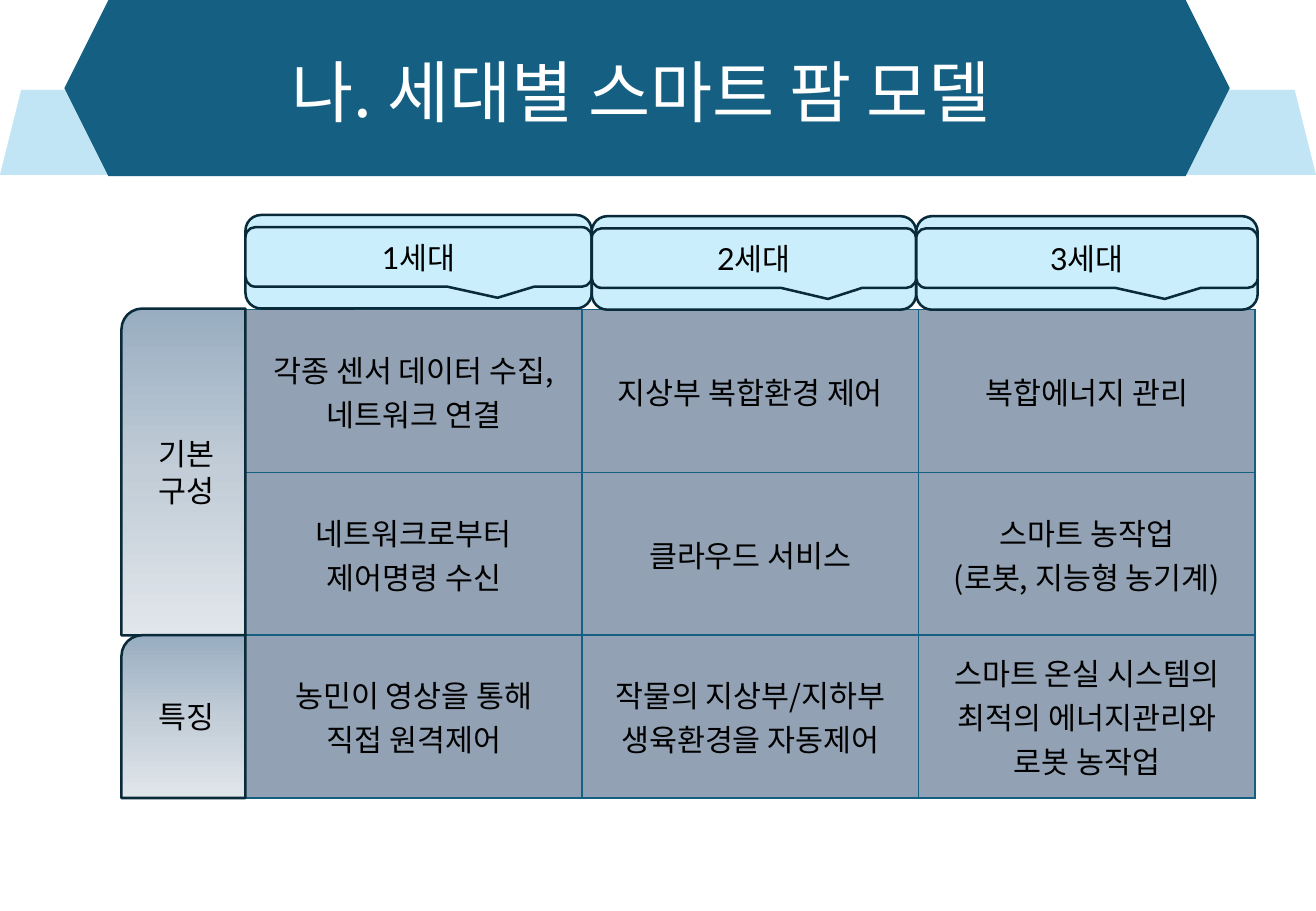
from lxml.etree import SubElement
from pptx import Presentation
from pptx.dml.color import RGBColor
from pptx.enum.shapes import MSO_SHAPE as Kind
from pptx.enum.text import MSO_ANCHOR as Anchor, PP_ALIGN as Align
from pptx.oxml.ns import qn
from pptx.util import Pt

SCALE = 9144
SANS, LATO = "Noto Sans CJK KR", "Lato"
TEAL, NAVY, ICE, SKY, SLATE = "156082", "092A39", "CAEEFB", "C1E5F5", "92A2B4"
FADE = [(0, "98ADC1"), (50, "C2CDD7"), (100, "E1E6EB")]

TITLE = "나. 세대별 스마트 팜 모델"
BANDS = [
    (Kind.TRAPEZOID, (0, 74, 1083, 70), SKY),
    (Kind.HEXAGON, (53, 0, 959, 145), TEAL),
]
HEADS = [("1세대", 177, 285), ("2세대", 178, 267), ("3세대", 178, 281)]
SIDES = [(["기본", "구성"], 269), (["특징"], 134)]
CELLS = [
    [["각종 센서 데이터 수집,", "네트워크 연결"], ["지상부 복합환경 제어"], ["복합에너지 관리"]],
    [["네트워크로부터", "제어명령 수신"], ["클라우드 서비스"],
     ["스마트 농작업", "(로봇, 지능형 농기계)"]],
    [["농민이 영상을 통해", "직접 원격제어"], ["작물의 지상부/지하부", "생육환경을 자동제어"],
     ["스마트 온실 시스템의", "최적의 에너지관리와", "로봇 농작업"]],
]
LEFT, TOP, COL, ROW = 202, 255, 277, 134
SIDE_X, SIDE_Y, SIDE_W = 100, 254, 102
HEAD_H, TAB_DY, TAB_H = 77, 10, 49


def px(*nums):
    return [round(n * SCALE) for n in nums]


def rgb(code):
    return RGBColor.from_string(code)


def write(frame, lines, face, size=18, color="000000"):
    frame.word_wrap = True
    for i, line in enumerate(lines):
        para = frame.add_paragraph() if i else frame.paragraphs[0]
        para.alignment = Align.CENTER
        run = para.add_run()
        run.text = line
        font = run.font
        font.size, font.name = Pt(size), face
        font.color.rgb = rgb(color)
        SubElement(run._r.get_or_add_rPr(), qn("a:ea"), typeface=face)


def draw(slide, kind, box, fill=None, edge=None, lines=()):
    shape = slide.shapes.add_shape(kind, *px(*box))
    shape.shadow.inherit = False
    if fill:
        shape.fill.solid()
        shape.fill.fore_color.rgb = rgb(fill)
    if edge:
        shape.line.color.rgb = rgb(edge)
        shape.line.width = Pt(1.5)
    else:
        shape.line.fill.background()
    if lines:
        shape.text_frame.vertical_anchor = Anchor.MIDDLE
        write(shape.text_frame, lines, LATO)
    return shape


def shade(shape):
    props = shape.element.spPr
    props.find(qn("a:xfrm")).set("flipH", "1")
    grad = SubElement(props, qn("a:gradFill"), rotWithShape="1")
    stops = SubElement(grad, qn("a:gsLst"))
    for pos, code in FADE:
        stop = SubElement(stops, qn("a:gs"), pos=str(pos * 1000))
        SubElement(stop, qn("a:srgbClr"), val=code)
    SubElement(grad, qn("a:lin"), ang="5400000", scaled="0")
    props.find(qn("a:prstGeom")).addnext(grad)


def frame_cell(cell):
    props = cell._tc.get_or_add_tcPr()
    for side in ("lnL", "lnR", "lnT", "lnB"):
        line = SubElement(props, qn("a:" + side), w=str(Pt(1)))
        fill = SubElement(line, qn("a:solidFill"))
        SubElement(fill, qn("a:srgbClr"), val=TEAL)
    cell.fill.solid()
    cell.fill.fore_color.rgb = rgb(SLATE)


def add_grid(slide):
    size = px(LEFT, TOP, COL * 3, ROW * 3)
    table = slide.shapes.add_table(3, 3, *size).table
    table.first_row = table.horz_banding = False
    for r, row in enumerate(CELLS):
        for c, lines in enumerate(row):
            cell = table.cell(r, c)
            frame_cell(cell)
            cell.vertical_anchor = Anchor.MIDDLE
            write(cell.text_frame, lines, SANS)


def add_title(slide):
    title = slide.shapes.title
    title.left, title.top, title.width, title.height = px(44, 6, 967, 145)
    title.text_frame.vertical_anchor = Anchor.MIDDLE
    write(title.text_frame, [TITLE], SANS, 40, "FFFFFF")
    title.text_frame.paragraphs[0].line_spacing = 0.9
    title.element.getparent().append(title.element)


def main():
    """Build the slide on smart farm generations."""
    deck = Presentation()
    deck.slide_width, deck.slide_height = px(1083, 750)
    slide = deck.slides.add_slide(deck.slide_layouts[5])
    for kind, box, fill in BANDS:
        draw(slide, kind, box, fill)
    add_title(slide)
    add_grid(slide)

    x = LEFT
    for name, y, wide in HEADS:
        draw(slide, Kind.ROUNDED_RECTANGLE, (x, y, wide, HEAD_H), ICE, NAVY)
        box = (x, y + TAB_DY, wide, TAB_H)
        tab = draw(slide, Kind.ROUNDED_RECTANGULAR_CALLOUT, box, ICE, NAVY, [name])
        for i, value in enumerate((0.228, 0.686, 0.167)):
            tab.adjustments[i] = value
        x += wide

    y = SIDE_Y
    for lines, high in SIDES:
        box = (SIDE_X, y, SIDE_W, high)
        shade(draw(slide, Kind.ROUND_1_RECTANGLE, box, None, NAVY, lines))
        y += high
    deck.save("out.pptx")


if __name__ == "__main__":
    main()
